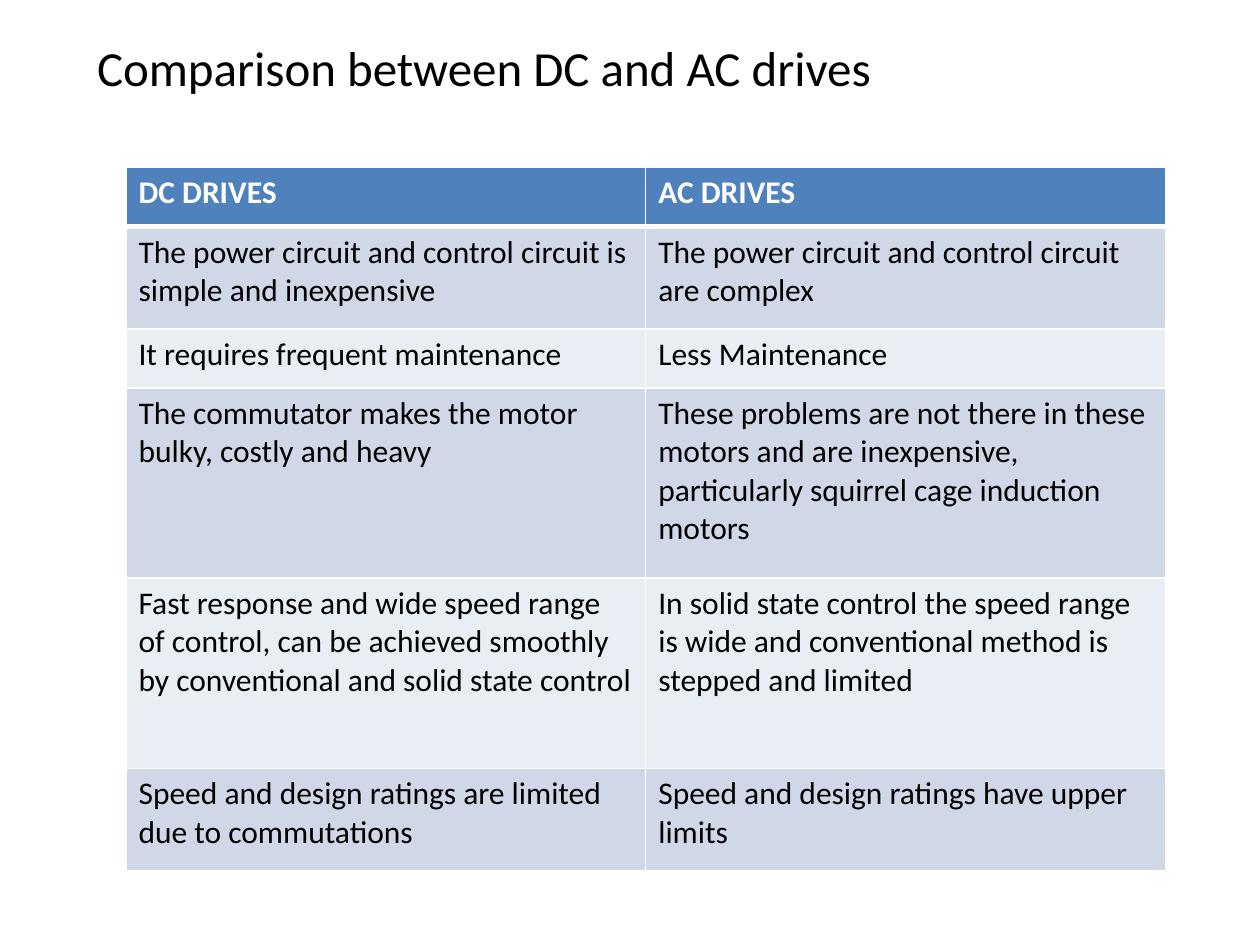
import pptx
import pptx.dml.color
import pptx.enum.text
import pptx.oxml
import pptx.oxml.ns
import pptx.util
from pptx.util import Inches

RGBColor = pptx.dml.color.RGBColor
WHITE = RGBColor(0xFF, 0xFF, 0xFF)
BLACK = RGBColor(0x00, 0x00, 0x00)
BLUE = RGBColor(0x4F, 0x81, 0xBD)
BANDS = (RGBColor(0xD0, 0xD8, 0xE8), RGBColor(0xE9, 0xED, 0xF4))

DRIVES = [
    ("DC DRIVES", "AC DRIVES"),
    ("The power circuit and control circuit is simple and inexpensive",
     "The power circuit and control circuit are complex"),
    ("It requires frequent maintenance", "Less Maintenance"),
    ("The commutator makes the motor bulky, costly and heavy",
     "These problems are not there in these motors and are inexpensive, "
     "particularly squirrel cage induction motors"),
    ("Fast response and wide speed range of control, can be achieved "
     "smoothly by conventional and solid state control",
     "In solid state control the speed range is wide and conventional "
     "method is stepped and limited"),
    ("Speed and design ratings are limited due to commutations",
     "Speed and design ratings have upper limits"),
]
HEIGHTS = (0.47, 0.81, 0.47, 1.51, 1.51, 0.81)


class Deck:
    def __init__(self, font):
        self.font = font
        self.prs = pptx.Presentation()
        self.prs.slide_width = Inches(10)
        self.prs.slide_height = Inches(7.5)
        self.slide = self.prs.slides.add_slide(self.prs.slide_layouts[5])

    def style(self, para, size, color, bold=False):
        para.font.name = self.font
        para.font.size = pptx.util.Pt(size)
        para.font.color.rgb = color
        para.font.bold = bold

    def title(self, text, left, top, width, height):
        shape = self.slide.shapes.title
        shape.left, shape.top = Inches(left), Inches(top)
        shape.width, shape.height = Inches(width), Inches(height)
        frame = shape.text_frame
        frame.text = text
        frame.word_wrap = True
        frame.auto_size = pptx.enum.text.MSO_AUTO_SIZE.NONE
        frame.vertical_anchor = pptx.enum.text.MSO_ANCHOR.TOP
        para = frame.paragraphs[0]
        para.alignment = pptx.enum.text.PP_ALIGN.LEFT
        self.style(para, 28, BLACK)

    def edge(self, cell, side, width):
        """Draw one white border; call before the cell is filled."""
        line = pptx.oxml.parse_xml(
            f'<a:ln{side} {pptx.oxml.ns.nsdecls("a")} '
            f'w="{pptx.util.Pt(width)}"><a:solidFill>'
            f'<a:srgbClr val="{WHITE}"/></a:solidFill></a:ln{side}>')
        cell._tc.get_or_add_tcPr().append(line)

    def table(self, rows, heights, left, top, width):
        cols = len(rows[0])
        table = self.slide.shapes.add_table(
            len(rows), cols, Inches(left), Inches(top),
            Inches(width), Inches(sum(heights))).table
        for col in table.columns:
            col.width = Inches(width / cols)
        for r, (row, height) in enumerate(zip(rows, heights)):
            table.rows[r].height = Inches(height)
            head = r == 0
            for c, text in enumerate(row):
                cell = table.cell(r, c)
                cell.text = text
                self.style(cell.text_frame.paragraphs[0], 18,
                           WHITE if head else BLACK, head)
                for side in "LRTB":
                    thick = (r, side) in ((0, "B"), (1, "T"))
                    self.edge(cell, side, 3 if thick else 1)
                cell.fill.solid()
                cell.fill.fore_color.rgb = BLUE if head else BANDS[(r - 1) % 2]


def main():
    deck = Deck("Calibri")
    deck.title("Comparison between DC and AC drives", 0.67, 0.25, 7, 0.57)
    deck.table(DRIVES, HEIGHTS, 1, 1.33, 8.25)
    deck.prs.save("out.pptx")


if __name__ == "__main__":
    main()
